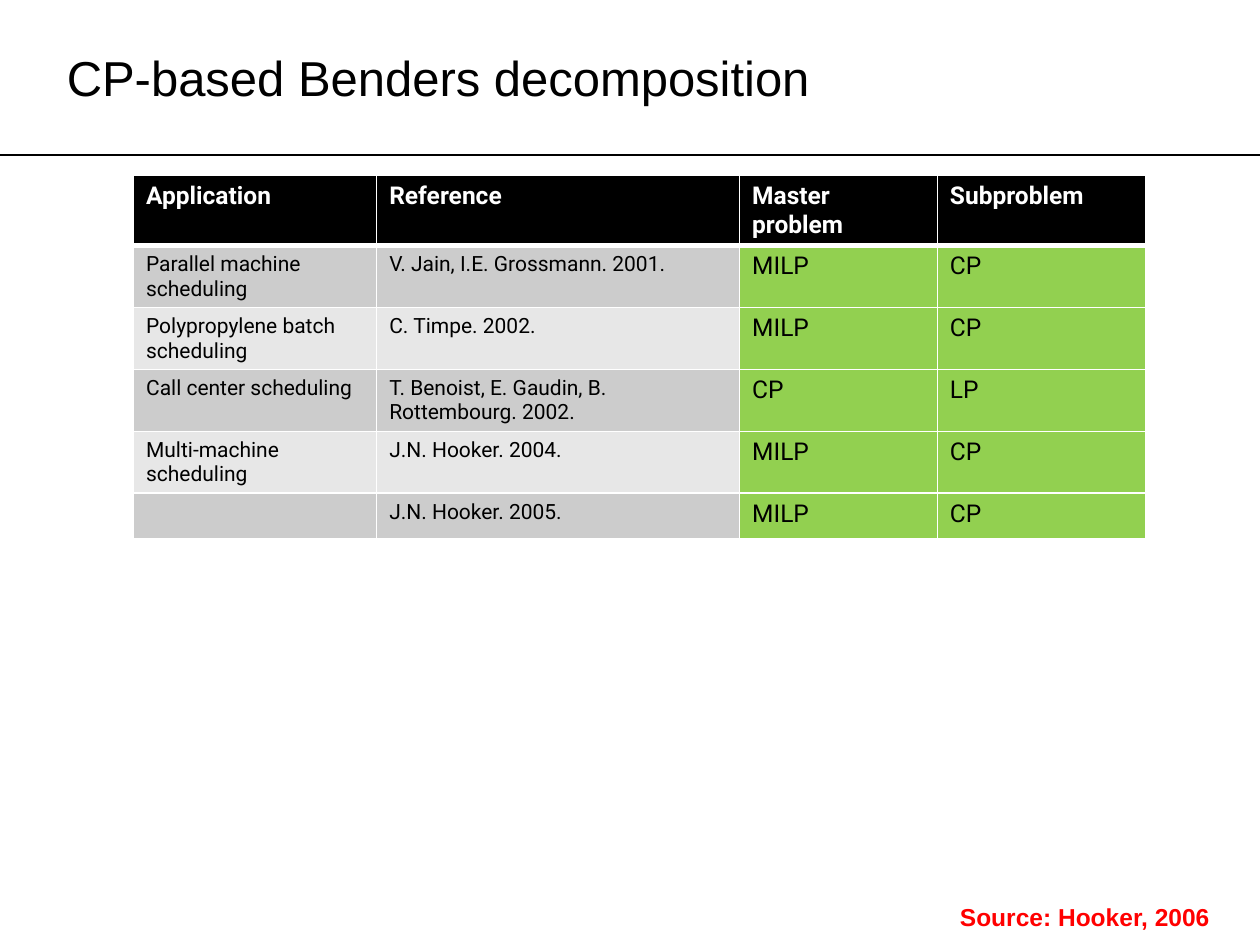
from lxml import etree
from pptx import Presentation, util as u
from pptx.dml.color import RGBColor
from pptx.enum import shapes, text
from pptx.oxml.ns import qn

INK = {"black": "000000", "white": "FFFFFF", "dark": "CCCCCC",
       "light": "E7E7E7", "green": "92D050", "red": "FF0000"}
COLS = [1.93, 2.88, 1.57, 1.65]
ROWS = [0.55, 0.49, 0.49, 0.49, 0.49, 0.36]
DATA = [
    ["Application", "Reference", "Master problem", "Subproblem"],
    ["Parallel machine scheduling", "V. Jain, I.E. Grossmann. 2001.", "MILP", "CP"],
    ["Polypropylene batch scheduling", "C. Timpe. 2002.", "MILP", "CP"],
    ["Call center scheduling", "T. Benoist, E. Gaudin, B. Rottembourg. 2002.", "CP", "LP"],
    ["Multi-machine scheduling", "J.N. Hooker. 2004.", "MILP", "CP"],
    ["", "J.N. Hooker. 2005.", "MILP", "CP"],
]


def tint(key):
    """Return the named colour."""
    return RGBColor.from_string(INK[key])


def style(para, face, size, key, bold=False):
    """Set the font and left alignment of a paragraph."""
    para.alignment = text.PP_ALIGN.LEFT
    font = para.font
    font.name, font.size, font.bold = face, u.Pt(size), bold
    font.color.rgb = tint(key)


def place(shape, box):
    """Move a shape to a box in inches."""
    shape.left, shape.top, shape.width, shape.height = map(u.Inches, box)


def edge(cell, base):
    """Draw white borders, with the given bottom width in points."""
    props = cell._tc.get_or_add_tcPr()
    for spot, (side, width) in enumerate(zip("LRTB", (1, 1, 1, base))):
        line = etree.Element(qn("a:ln" + side), w=str(u.Pt(width)))
        fill = etree.SubElement(line, qn("a:solidFill"))
        etree.SubElement(fill, qn("a:srgbClr"), val=INK["white"])
        props.insert(spot, line)


def head(slide, box):
    """Place the title and the rule across the slide below it."""
    title = slide.shapes.title
    place(title, box)
    frame = title.text_frame
    frame.text = "CP-based Benders decomposition"
    frame.vertical_anchor = text.MSO_ANCHOR.MIDDLE
    style(frame.paragraphs[0], "Arial", 28, "black")
    low = u.Inches(box[1] + box[3] + 0.08)
    rule = slide.shapes.add_connector(
        shapes.MSO_CONNECTOR.STRAIGHT, 0, low, u.Inches(10), low)
    rule.line.color.rgb, rule.line.width = tint("black"), u.Pt(0.75)
    etree.SubElement(rule._element.spPr, qn("a:effectLst"))


def grid(slide, left, top):
    """Place the table of applications."""
    box = map(u.Inches, (left, top, sum(COLS), sum(ROWS)))
    table = slide.shapes.add_table(len(ROWS), len(COLS), *box).table
    for col, width in zip(table.columns, COLS):
        col.width = u.Inches(width)
    for r, (row, high) in enumerate(zip(DATA, ROWS)):
        table.rows[r].height = u.Inches(high)
        band = "dark" if r % 2 else "light"
        for c, words in enumerate(row):
            cell = table.cell(r, c)
            cell.text = words
            fill = "black" if r == 0 else "green" if c > 1 else band
            cell.fill.solid()
            cell.fill.fore_color.rgb = tint(fill)
            edge(cell, 1 if r else 3)
            size = 14 if r == 0 or c > 1 else 12
            style(cell.text_frame.paragraphs[0], "Roboto", size,
                  "black" if r else "white", r == 0)


def source(slide, box):
    """Place the source credit."""
    note = slide.shapes.add_textbox(*map(u.Inches, box))
    frame = note.text_frame
    frame.word_wrap = False
    frame.auto_size = text.MSO_AUTO_SIZE.SHAPE_TO_FIT_TEXT
    frame.text = "Source: Hooker, 2006"
    style(frame.paragraphs[0], "Arial", 14, "red", True)


def main():
    """Build and save the slide."""
    deck = Presentation()
    deck.slide_width, deck.slide_height = u.Inches(10), u.Inches(7.5)
    slide = deck.slides.add_slide(deck.slide_layouts[5])
    head(slide, (0.43, 0.07, 9.14, 1.08))
    grid(slide, 1.06, 1.39)
    source(slide, (7.52, 7.11, 2.19, 0.34))
    deck.save("out.pptx")


if __name__ == "__main__":
    main()
